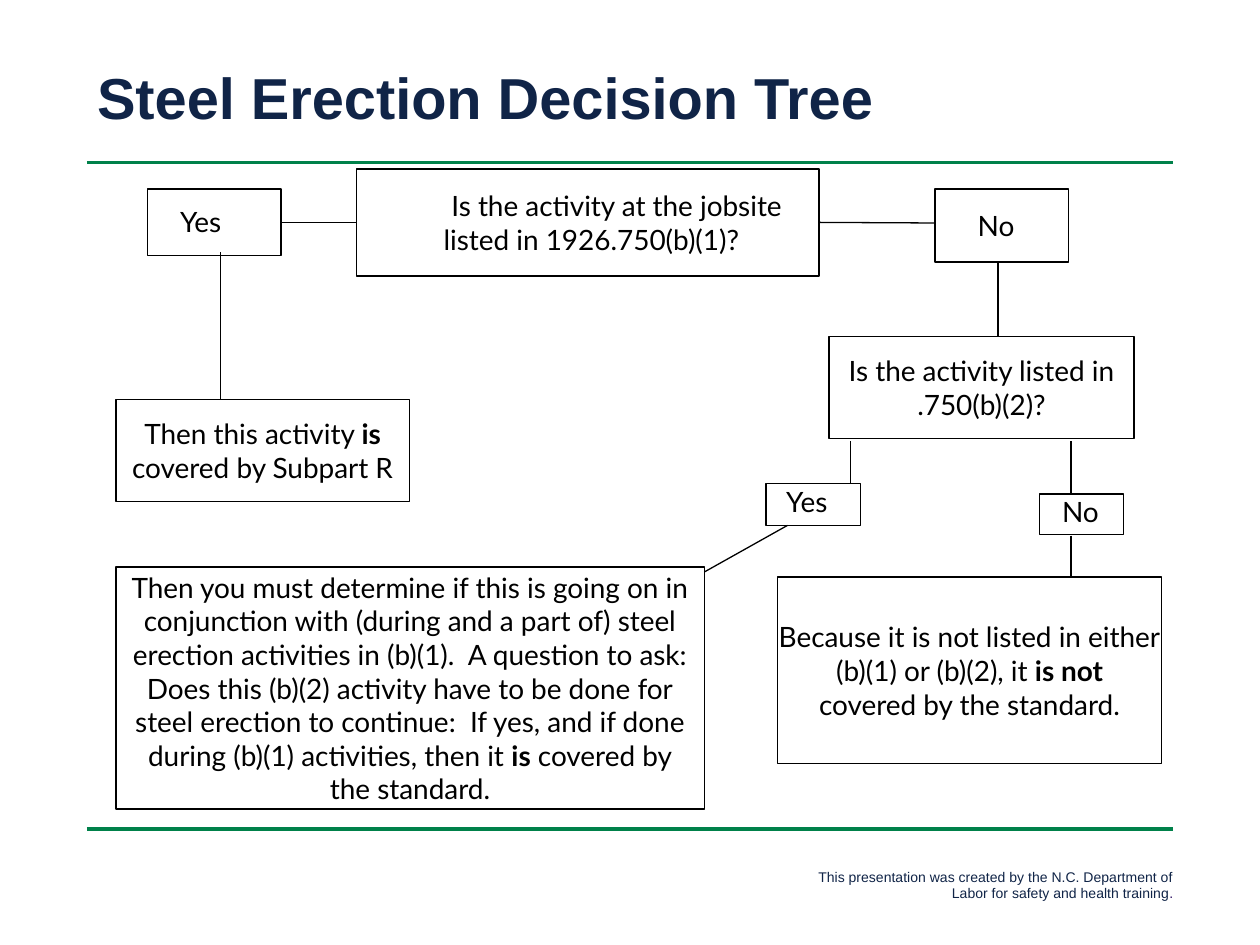
from dataclasses import dataclass
from typing import Optional

from lxml.etree import SubElement
from pptx import Presentation
from pptx.dml.color import RGBColor
from pptx.enum.shapes import MSO_CONNECTOR, MSO_SHAPE
from pptx.enum.text import MSO_ANCHOR, MSO_AUTO_SIZE, PP_ALIGN
from pptx.oxml.ns import qn
from pptx.util import Inches, Pt


@dataclass(frozen=True)
class Theme:
    navy: str = "102447"
    violet: str = "2B0E62"
    green: str = "00814A"
    black: str = "000000"
    white: str = "FFFFFF"
    heading_font: str = "Arial"
    body_font: str = "Lato"
    title_size: int = 33
    body_size: int = 16
    credit_size: int = 8
    rule_width: float = 2
    line_width: float = 0.75


@dataclass(frozen=True)
class Node:
    """A box of the tree; **text** is bold, inset is (left, bottom) in inches."""
    left: float
    top: float
    width: float
    height: float
    lines: tuple[str, ...]
    align: PP_ALIGN = PP_ALIGN.CENTER
    inset: tuple[float, float] = (0, 0)
    indents: tuple[float, ...] = ()


@dataclass(frozen=True)
class Link:
    """A line; start and stop name a (node, side) that it is joined to."""
    x1: float
    y1: float
    x2: float
    y2: float
    start: Optional[tuple[str, int]] = None
    stop: Optional[tuple[str, int]] = None


THEME = Theme()
LEFT_SIDE, RIGHT_SIDE = 1, 3

NODES = {
    "listed in (b)(1)": Node(
        2.83, 1.34, 3.67, 0.85,
        ("Is the activity at the jobsite", "listed in 1926.750(b)(1)?"),
        indents=(0.46, 0.06)),
    "first yes": Node(1.17, 1.5, 1.06, 0.53, ("Yes",), PP_ALIGN.LEFT, (0.26, 0.02)),
    "first no": Node(7.42, 1.5, 1.06, 0.58, ("No",), PP_ALIGN.LEFT, (0.34, 0)),
    "listed in (b)(2)": Node(
        6.58, 2.67, 2.42, 0.81, ("Is the activity listed in", ".750(b)(2)?")),
    "covered": Node(
        0.92, 3.17, 2.33, 0.81,
        ("Then this activity **is**", "covered by Subpart R")),
    "second yes": Node(6.08, 3.84, 0.75, 0.33, ("Yes",), PP_ALIGN.LEFT, (0.16, 0.06)),
    "second no": Node(8.25, 3.92, 0.67, 0.32, ("No",), PP_ALIGN.LEFT, (0.18, 0.04)),
    "in conjunction": Node(
        0.92, 4.5, 4.67, 1.92,
        ("Then you must determine if this is going on in",
         "conjunction with (during and a part of) steel",
         "erection activities in (b)(1).  A question to ask:",
         "Does this (b)(2) activity have to be done for",
         "steel erection to continue:  If yes, and if done",
         "during (b)(1) activities, then it **is** covered by",
         "the standard.")),
    "not covered": Node(
        6.17, 4.58, 3.05, 1.48,
        ("Because it is not listed in either",
         "(b)(1) or (b)(2), it **is not**",
         "covered by the standard.")),
}

LINKS = (
    Link(2.83, 1.77, 2.23, 1.77, ("listed in (b)(1)", LEFT_SIDE), ("first yes", RIGHT_SIDE)),
    Link(6.5, 1.77, 7.42, 1.77, ("listed in (b)(1)", RIGHT_SIDE)),
    Link(1.75, 2, 1.75, 3.17),
    Link(7.92, 2.08, 7.92, 2.67),
    Link(6.75, 3.5, 6.75, 3.83),
    Link(8.5, 3.5, 8.5, 3.92),
    Link(8.5, 4.25, 8.5, 4.58),
    Link(6.25, 4.17, 5.59, 4.54),
)


def set_format(target, values: dict) -> None:
    for name, value in values.items():
        setattr(target, name, value)


def add_span(para, text: str, font: str, size: float, colour: str, bold: bool = False) -> None:
    span = para.add_run()
    span.text = text
    set_format(span.font, {"name": font, "size": Pt(size), "bold": bold})
    span.font.color.rgb = RGBColor.from_string(colour)


def add_line(page, link: Link, colour: str, width: float):
    line = page.shapes.add_connector(
        MSO_CONNECTOR.STRAIGHT,
        *(Inches(value) for value in (link.x1, link.y1, link.x2, link.y2)))
    line.line.color.rgb = RGBColor.from_string(colour)
    line.line.width = Pt(width)
    SubElement(line._element.spPr, qn("a:effectLst"))
    return line


def add_node(page, node: Node):
    box = page.shapes.add_shape(
        MSO_SHAPE.RECTANGLE,
        *(Inches(value) for value in (node.left, node.top, node.width, node.height)))
    box.shadow.inherit = False
    box.fill.solid()
    box.fill.fore_color.rgb = RGBColor.from_string(THEME.white)
    box.line.color.rgb = RGBColor.from_string(THEME.black)
    box.line.width = Pt(THEME.line_width)

    frame = box.text_frame
    left, bottom = node.inset
    set_format(frame, {
        "margin_left": Inches(left), "margin_top": 0, "margin_right": 0,
        "margin_bottom": Inches(bottom), "word_wrap": False,
        "vertical_anchor": MSO_ANCHOR.MIDDLE})
    for index, text in enumerate(node.lines):
        para = frame.add_paragraph() if index else frame.paragraphs[0]
        para.alignment = node.align
        if node.indents:
            para._p.get_or_add_pPr().set("marL", str(Inches(node.indents[index])))
        for part, piece in enumerate(text.split("**")):
            if piece:
                add_span(para, piece, THEME.body_font, THEME.body_size,
                         THEME.black, bold=part % 2 == 1)
    return box


def add_title(page, text: str) -> None:
    title = page.shapes.title
    set_format(title, {"left": Inches(0.67), "top": Inches(0.5),
                       "width": Inches(8.67), "height": Inches(0.6)})
    set_format(title.text_frame, {"vertical_anchor": MSO_ANCHOR.MIDDLE,
                                  "auto_size": MSO_AUTO_SIZE.NONE})
    para = title.text_frame.paragraphs[0]
    set_format(para, {"alignment": PP_ALIGN.LEFT, "line_spacing": 0.9})
    add_span(para, text, THEME.heading_font, THEME.title_size, THEME.navy, bold=True)


def add_credit(page, text: str) -> None:
    box = page.shapes.add_textbox(Inches(6.16), Inches(6.84), Inches(3.25), Inches(0.37))
    box.text_frame.word_wrap = True
    para = box.text_frame.paragraphs[0]
    para.alignment = PP_ALIGN.RIGHT
    for piece, colour in ((text, THEME.navy), (".", THEME.violet)):
        add_span(para, piece, THEME.heading_font, THEME.credit_size, colour)


def main() -> None:
    deck = Presentation()
    deck.slide_width, deck.slide_height = Inches(10), Inches(7.5)
    page = deck.slides.add_slide(deck.slide_layouts[5])

    # Frame of the page: rules, credit and title
    for height in (1.29, 6.58):
        add_line(page, Link(0.69, height, 9.31, height), THEME.green, THEME.rule_width)
    add_credit(page, "This presentation was created by the N.C. Department of "
                     "Labor for safety and health training")
    add_title(page, "Steel Erection Decision Tree")

    # Decision tree: boxes, then the lines between them
    boxes = {name: add_node(page, node) for name, node in NODES.items()}
    for link in LINKS:
        line = add_line(page, link, THEME.black, THEME.line_width)
        if link.start:
            name, side = link.start
            line.begin_connect(boxes[name], side)
        if link.stop:
            name, side = link.stop
            line.end_connect(boxes[name], side)

    deck.save("out.pptx")


if __name__ == "__main__":
    main()
